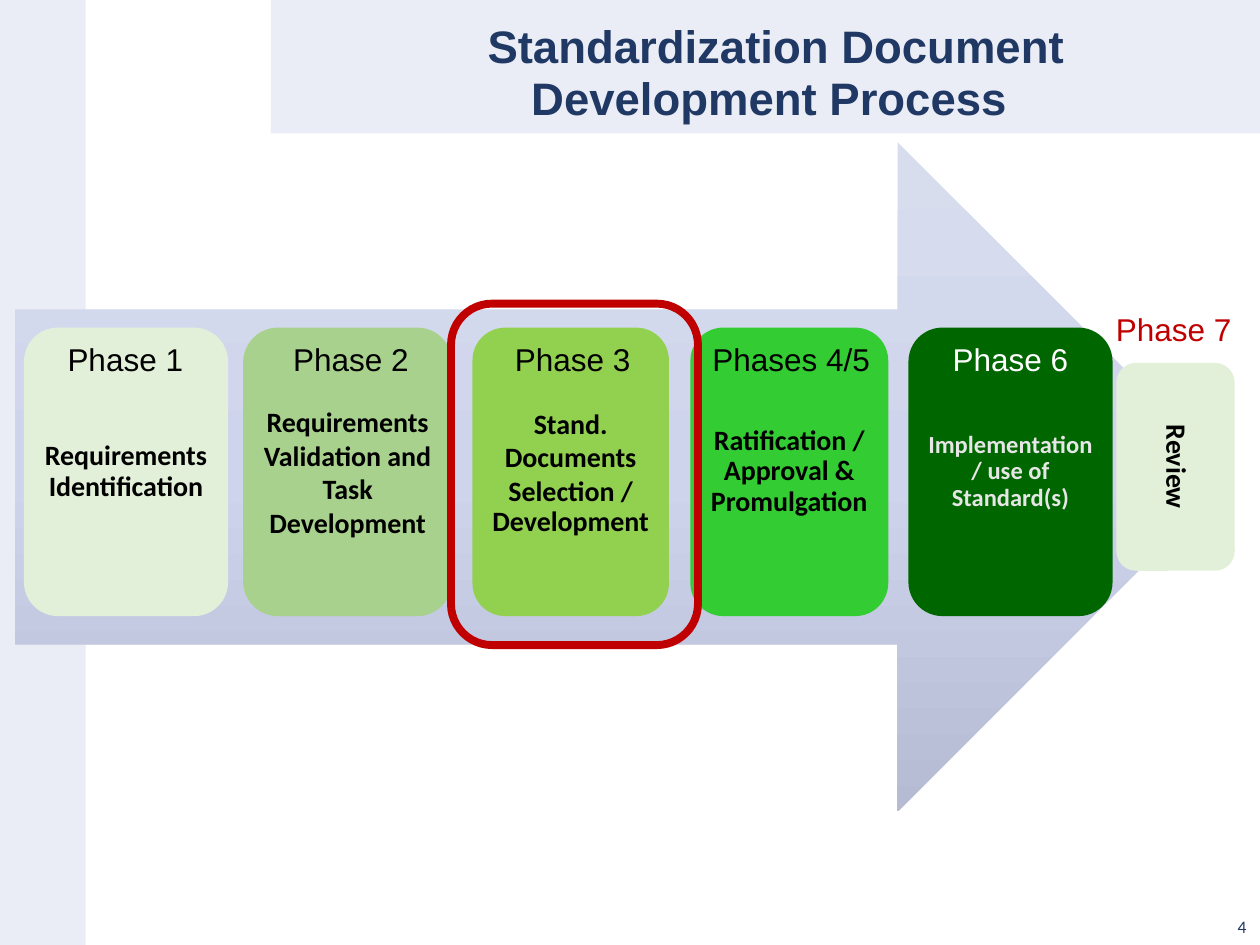
from dataclasses import dataclass

from pptx import Presentation
from pptx.dml.color import RGBColor
from pptx.enum.shapes import MSO_SHAPE
from pptx.enum.text import MSO_ANCHOR, MSO_AUTO_SIZE, PP_ALIGN
from pptx.util import Inches, Pt
from copy import deepcopy

RECT, ROUNDED, ARROW = MSO_SHAPE.RECTANGLE, MSO_SHAPE.ROUNDED_RECTANGLE, MSO_SHAPE.RIGHT_ARROW
CENTER, RIGHT = PP_ALIGN.CENTER, PP_ALIGN.RIGHT
TOP, MIDDLE, BOTTOM = MSO_ANCHOR.TOP, MSO_ANCHOR.MIDDLE, MSO_ANCHOR.BOTTOM
SLIDE_WIDTH, SLIDE_HEIGHT = Inches(10), Inches(7.5)
TITLE_ONLY = 5


@dataclass(frozen=True)
class Theme:
    heading_font: str = "Arial"
    card_font: str = "Calibri"
    title_size: int = 26
    label_size: int = 18
    card_size: int = 16
    small_card_size: int = 14
    number_size: int = 10
    navy: str = "203864"
    band: str = "EAEDF6"
    black: str = "000000"
    white: str = "FFFFFF"
    light_gray: str = "E7E6E6"
    red: str = "C00000"
    pale_green: str = "E2F0D9"
    soft_green: str = "A9D18E"
    lime: str = "92D050"
    bright_green: str = "33CC33"
    dark_green: str = "006600"
    arrow_stops: tuple = ((0, "D8DDEE"), (0.5, "CED4EB"), (1, "B4BBD3"))


THEME = Theme()
CARD_TOP, CARD_HEIGHT, LABEL_TOP = 34.67, 30.53, 35.33

# left and width of the card, its fill, label, label centre, label colour
# and paragraphs, each with its line spacing
PHASES = [
    (1.9, 16.2, THEME.pale_green, "Phase 1", 9.95, THEME.black,
     [("Requirements Identification", 0.9)]),
    (19.3, 16.6, THEME.soft_green, "Phase 2", 27.85, THEME.black,
     [("Requirements Validation and Task Development", 1)]),
    (37.5, 15.6, THEME.lime, "Phase 3", 45.45, THEME.black,
     [("Stand. Documents Selection /", 1), ("Development", 0.9)]),
    (54.8, 15.7, THEME.bright_green, "Phases 4/5", 62.8, THEME.black,
     [("Ratification / Approval &\vPromulgation", 0.9)]),
    (72.1, 16.2, THEME.dark_green, "Phase 6", 80.2, THEME.white,
     [("Implementation / use of Standard(s)", 0.9)]),
]


def place(left, top, width, height):
    """Turn percentages of the slide's size into lengths."""
    return (int(SLIDE_WIDTH * left / 100), int(SLIDE_HEIGHT * top / 100),
            int(SLIDE_WIDTH * width / 100), int(SLIDE_HEIGHT * height / 100))


def style(para, font, size, color, bold=False, align=CENTER):
    para.alignment = align
    for span in para.runs:
        span.font.name = font
        span.font.size = Pt(size)
        span.font.bold = bold
        span.font.color.rgb = RGBColor.from_string(color)


def add_shape(page, kind, area, fill=None):
    shape = page.shapes.add_shape(kind, *place(*area))
    shape.shadow.inherit = False
    shape.line.fill.background()
    if fill:
        shape.fill.solid()
        shape.fill.fore_color.rgb = RGBColor.from_string(fill)
    else:
        shape.fill.background()
    return shape


def add_arrow(page):
    arrow = add_shape(page, ARROW, (1.2, 15.07, 96.6, 70.8))
    arrow.fill.gradient()
    arrow.fill.gradient_angle = 270
    stop_list = arrow.fill.gradient_stops[0]._gs.getparent()
    stop_list.insert(1, deepcopy(stop_list[0]))
    for stop, (position, color) in zip(arrow.fill.gradient_stops, THEME.arrow_stops):
        stop.position = position
        stop.color.rgb = RGBColor.from_string(color)


def add_card(page, area, fill, paragraphs, size, color):
    card = add_shape(page, ROUNDED, area, fill)
    frame = card.text_frame
    frame.word_wrap = True
    frame.vertical_anchor = MIDDLE
    frame.margin_left = frame.margin_right = Inches(0.06)
    frame.margin_top = frame.margin_bottom = Inches(0.06)
    frame.text = "\n".join(text for text, _ in paragraphs)
    for para, (_, spacing) in zip(frame.paragraphs, paragraphs):
        para.line_spacing = spacing
        style(para, THEME.card_font, size, color, bold=True)
    return card


def add_text(page, area, text, font, size, color, align=CENTER, anchor=TOP, wrap=True):
    box = page.shapes.add_textbox(*place(*area))
    frame = box.text_frame
    frame.word_wrap = wrap
    frame.vertical_anchor = anchor
    frame.text = text
    style(frame.paragraphs[0], font, size, color, align=align)


def add_label(page, center, top, text, color):
    width = 14.6 if len(text) > 7 else 11.3
    add_text(page, (center - width / 2, top, width, 5.33), text,
             THEME.heading_font, THEME.label_size, color, wrap=False)


def add_title(page):
    title = page.shapes.title
    title.left, title.top, title.width, title.height = place(21.7, 0.53, 77.9, 13.07)
    page.shapes._spTree.append(title._element)  # in front of the header band
    frame = title.text_frame
    frame.auto_size = MSO_AUTO_SIZE.NONE
    frame.word_wrap = True
    frame.vertical_anchor = TOP
    frame.margin_top = Inches(0.15)
    frame.text = "Standardization Document\nDevelopment Process"
    indents = (("marL", 0.19), ("marR", 0.11))
    for para, (side, indent) in zip(frame.paragraphs, indents):
        para._p.get_or_add_pPr().set(side, str(Inches(indent)))
        para.line_spacing = 0.9
        style(para, THEME.heading_font, THEME.title_size, THEME.navy, bold=True)
    frame.paragraphs[1].space_before = Pt(2)


def add_phases(page):
    for left, width, fill, label, center, label_color, paragraphs in PHASES:
        dark = fill == THEME.dark_green
        add_card(page, (left, CARD_TOP, width, CARD_HEIGHT), fill, paragraphs,
                 THEME.small_card_size if dark else THEME.card_size,
                 THEME.light_gray if dark else THEME.black)
        add_label(page, center, LABEL_TOP, label, label_color)


def add_review(page):
    card = add_card(page, (88.6, 38.4, 9.4, 22), THEME.pale_green,
                    [("Review", 0.9)], THEME.card_size, THEME.black)
    card.text_frame._txBody.bodyPr.set("vert", "vert")
    add_label(page, 93.15, 32.13, "Phase 7", THEME.red)


def add_highlight(page):
    frame = add_shape(page, ROUNDED, (35.8, 32.13, 19.6, 36.13))
    frame.line.color.rgb = RGBColor.from_string(THEME.red)
    frame.line.width = Pt(4.5)


def main():
    deck = Presentation()
    deck.slide_width, deck.slide_height = SLIDE_WIDTH, SLIDE_HEIGHT
    page = deck.slides.add_slide(deck.slide_layouts[TITLE_ONLY])
    add_shape(page, RECT, (0, 0, 6.8, 100), THEME.band)
    add_shape(page, RECT, (21.5, 0, 78.5, 14.13), THEME.band)
    add_title(page)
    add_arrow(page)
    add_phases(page)
    add_review(page)
    add_highlight(page)
    add_text(page, (77.4, 94.53, 22.5, 5.33), "4", THEME.card_font,
             THEME.number_size, THEME.navy, align=RIGHT, anchor=BOTTOM)
    deck.save("out.pptx")


if __name__ == "__main__":
    main()
